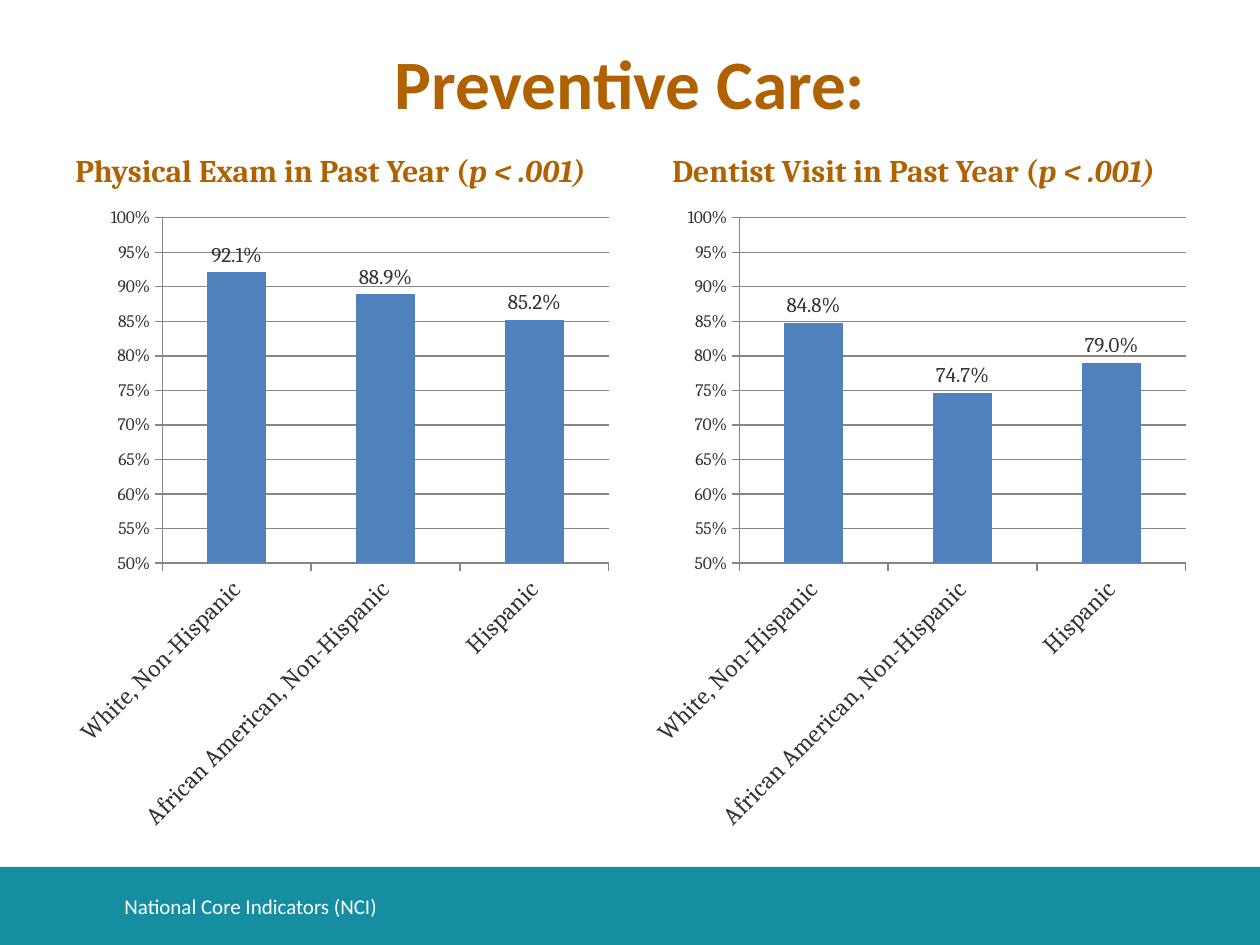
from pptx import Presentation
from pptx.chart.data import CategoryChartData
from pptx.dml.color import RGBColor
from pptx.enum.chart import XL_CHART_TYPE, XL_LABEL_POSITION, XL_TICK_MARK
from pptx.enum.shapes import MSO_SHAPE
from pptx.enum.text import MSO_ANCHOR, MSO_AUTO_SIZE, PP_ALIGN
from pptx.util import Emu, Pt

COLUMN = XL_CHART_TYPE.COLUMN_CLUSTERED
ABOVE = XL_LABEL_POSITION.OUTSIDE_END
OUTSIDE = XL_TICK_MARK.OUTSIDE
RECT = MSO_SHAPE.RECTANGLE
MIDDLE, BOTTOM = MSO_ANCHOR.MIDDLE, MSO_ANCHOR.BOTTOM
LEFT, CENTER = PP_ALIGN.LEFT, PP_ALIGN.CENTER
FIXED = MSO_AUTO_SIZE.NONE

BROWN = RGBColor(0xB0, 0x61, 0x00)
TEAL = RGBColor(0x16, 0x8E, 0xA2)
BLUE = RGBColor(0x4F, 0x81, 0xBD)
DARK = RGBColor(0x33, 0x33, 0x33)
GRAY = RGBColor(0x86, 0x86, 0x86)
WHITE = RGBColor(0xFF, 0xFF, 0xFF)

# Content
TITLE = "Preventive Care:"
FOOTER = "National Core Indicators (NCI)"
GROUPS = ["White, Non-Hispanic", "African American, Non-Hispanic", "Hispanic"]
PANELS = [
    # heading, heading left, chart left, values
    ("Physical Exam in Past Year (", 63, 63, (0.921, 0.889, 0.852)),
    ("Dentist Visit in Past Year (", 660, 640, (0.848, 0.747, 0.79)),
]
SIGNIF = "p < .001)"
PANEL_W = 557


def px(*nums):
    return [Emu(round(n * 914400 / 126)) for n in nums]


def write(shape, *runs, size, color, font="Calibri", bold=False,
          align=LEFT, anchor=MIDDLE):
    """Fill a shape with one paragraph of (text, italic) runs."""
    frame = shape.text_frame
    frame.word_wrap = True
    frame.auto_size = FIXED
    frame.vertical_anchor = anchor
    para = frame.paragraphs[0]
    para.alignment = align
    for text, slant in runs:
        run = para.add_run()
        run.text = text
        run.font.name, run.font.size = font, Pt(size)
        run.font.bold, run.font.italic = bold, slant
        run.font.color.rgb = color


def add_bars(slide, left, vals):
    data = CategoryChartData(number_format="0.0%")
    data.categories = GROUPS
    data.add_series("Series 1", vals)
    chart = slide.shapes.add_chart(
        COLUMN, *px(left, 195, PANEL_W, 649), data).chart
    chart.has_legend = chart.has_title = False
    chart.font.name, chart.font.size = "Cambria", Pt(10)
    chart.font.color.rgb = DARK

    # Bars and their labels
    plot = chart.plots[0]
    plot.gap_width = 150
    plot.vary_by_categories = False
    fill = plot.series[0].format.fill
    fill.solid()
    fill.fore_color.rgb = BLUE
    plot.has_data_labels = True
    labels = plot.data_labels
    labels.show_value = True
    labels.position = ABOVE
    labels.number_format, labels.number_format_is_linked = "0.0%", False
    labels.font.size = Pt(12)

    # Axes
    cat, val = chart.category_axis, chart.value_axis
    val.minimum_scale, val.maximum_scale, val.major_unit = 0.5, 1, 0.05
    val.tick_labels.number_format = "0%"
    val.tick_labels.number_format_is_linked = False
    val.has_major_gridlines = True
    cat.tick_labels.font.size = Pt(14)
    for axis in (cat, val):
        axis.major_tick_mark = OUTSIDE
    for part in (cat, val, val.major_gridlines):
        part.format.line.color.rgb = GRAY
        part.format.line.width = Pt(0.75)
    body = chart._chartSpace.xpath(".//c:catAx/c:txPr/a:bodyPr")[0]
    body.set("rot", "-2700000")
    body.set("vert", "horz")


def main():
    prs = Presentation()
    prs.slide_width, prs.slide_height = px(1260, 945)
    slide = prs.slides.add_slide(prs.slide_layouts[5])
    shapes = slide.shapes

    # Title
    title = shapes.title
    title.left, title.top, title.width, title.height = px(63, 37, 1134, 89)
    write(title, (TITLE, False), size=39.6, color=BROWN, bold=True,
          align=CENTER)

    # Footer band
    band = shapes.add_shape(RECT, *px(0, 867, 1260, 78))
    band.shadow.inherit = False
    band.fill.solid()
    band.fill.fore_color.rgb = TEAL
    band.line.fill.background()
    note = shapes.add_textbox(*px(112, 881, 932, 50))
    write(note, (FOOTER, False), size=12, color=WHITE)

    # Panels: heading over chart
    for head, head_x, chart_x, vals in PANELS:
        box = shapes.add_textbox(*px(head_x, 107, PANEL_W, 88))
        write(box, (head, False), (SIGNIF, True), size=18, color=BROWN,
              font="Cambria", bold=True, anchor=BOTTOM)
        add_bars(slide, chart_x, vals)

    prs.save("out.pptx")


if __name__ == "__main__":
    main()
